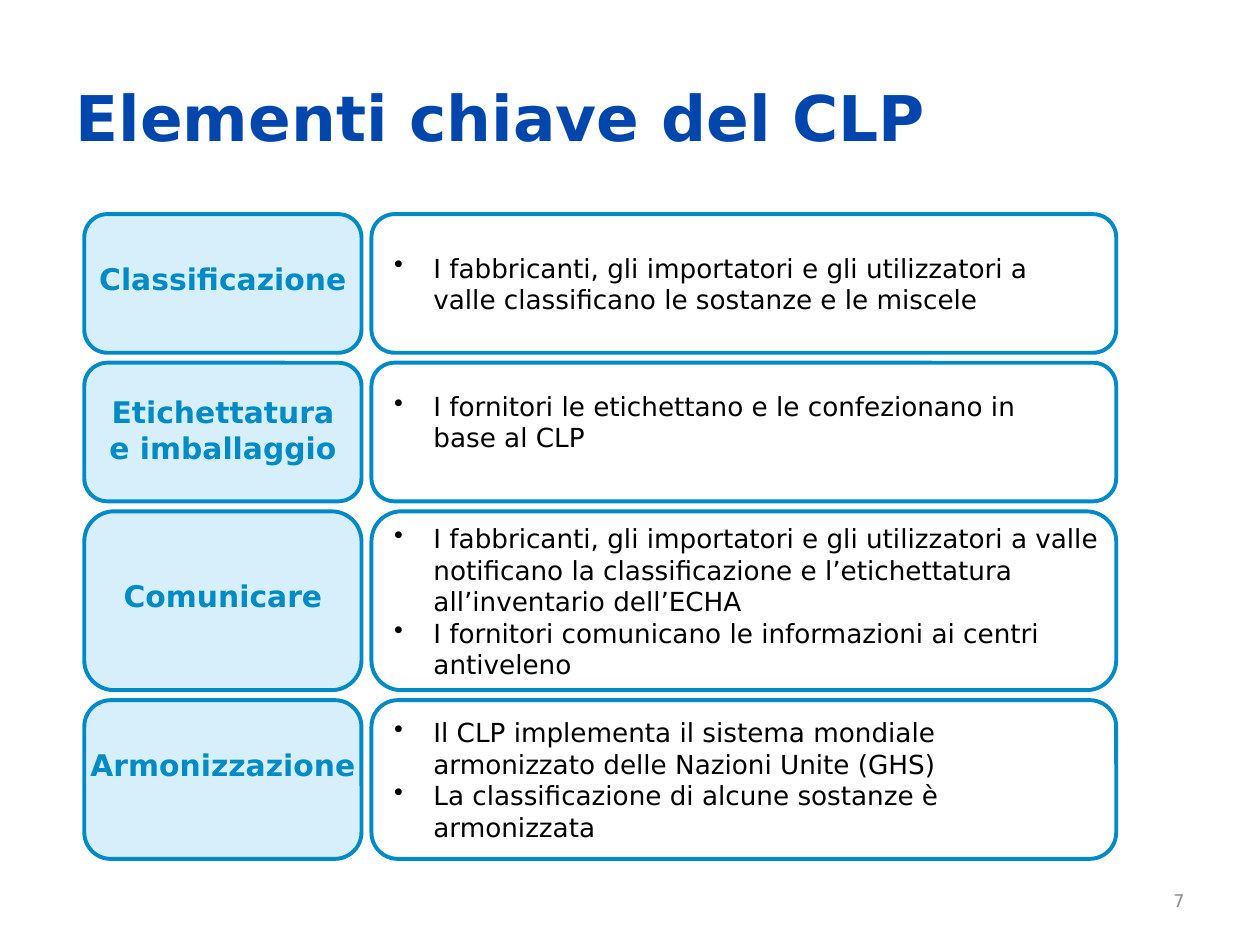
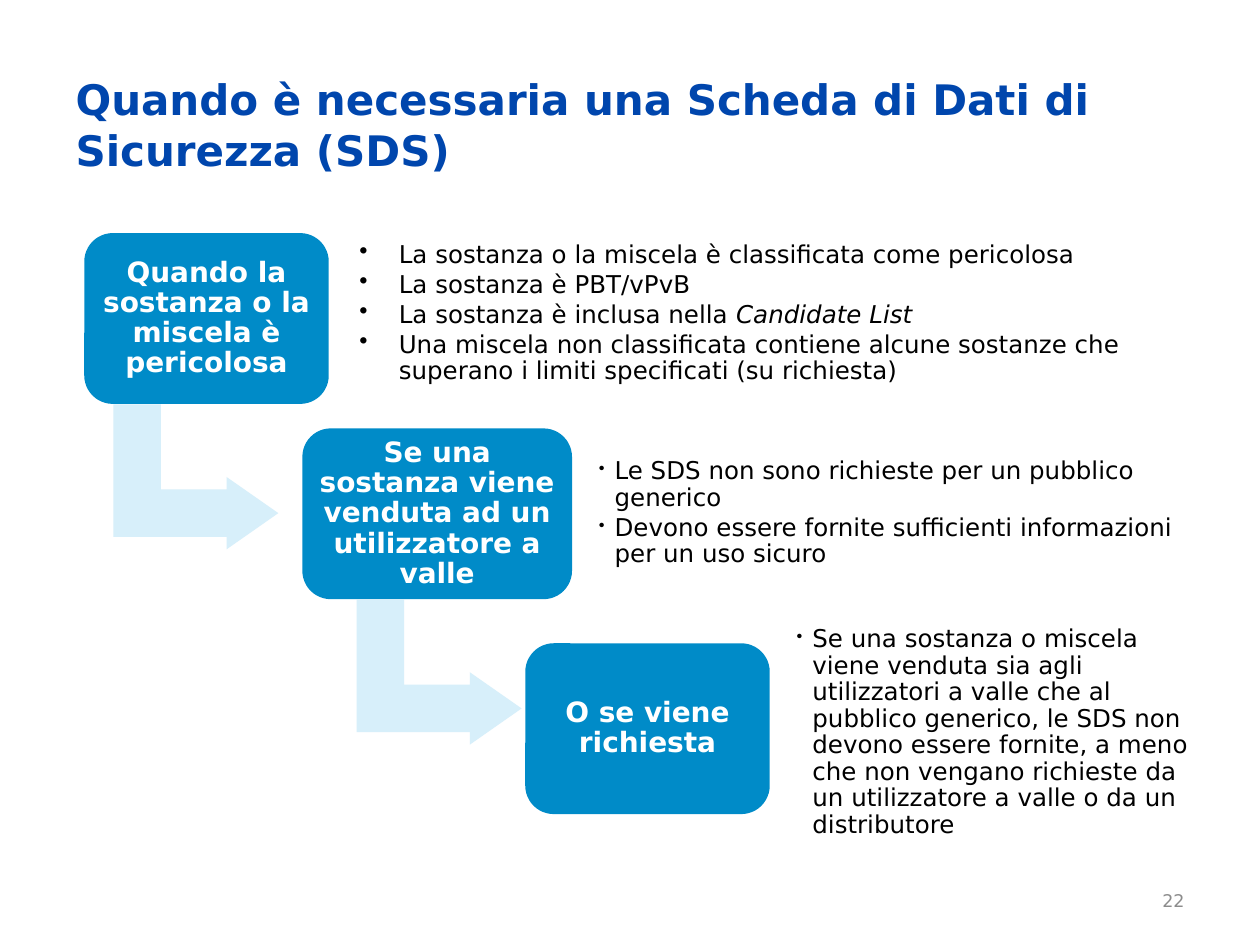
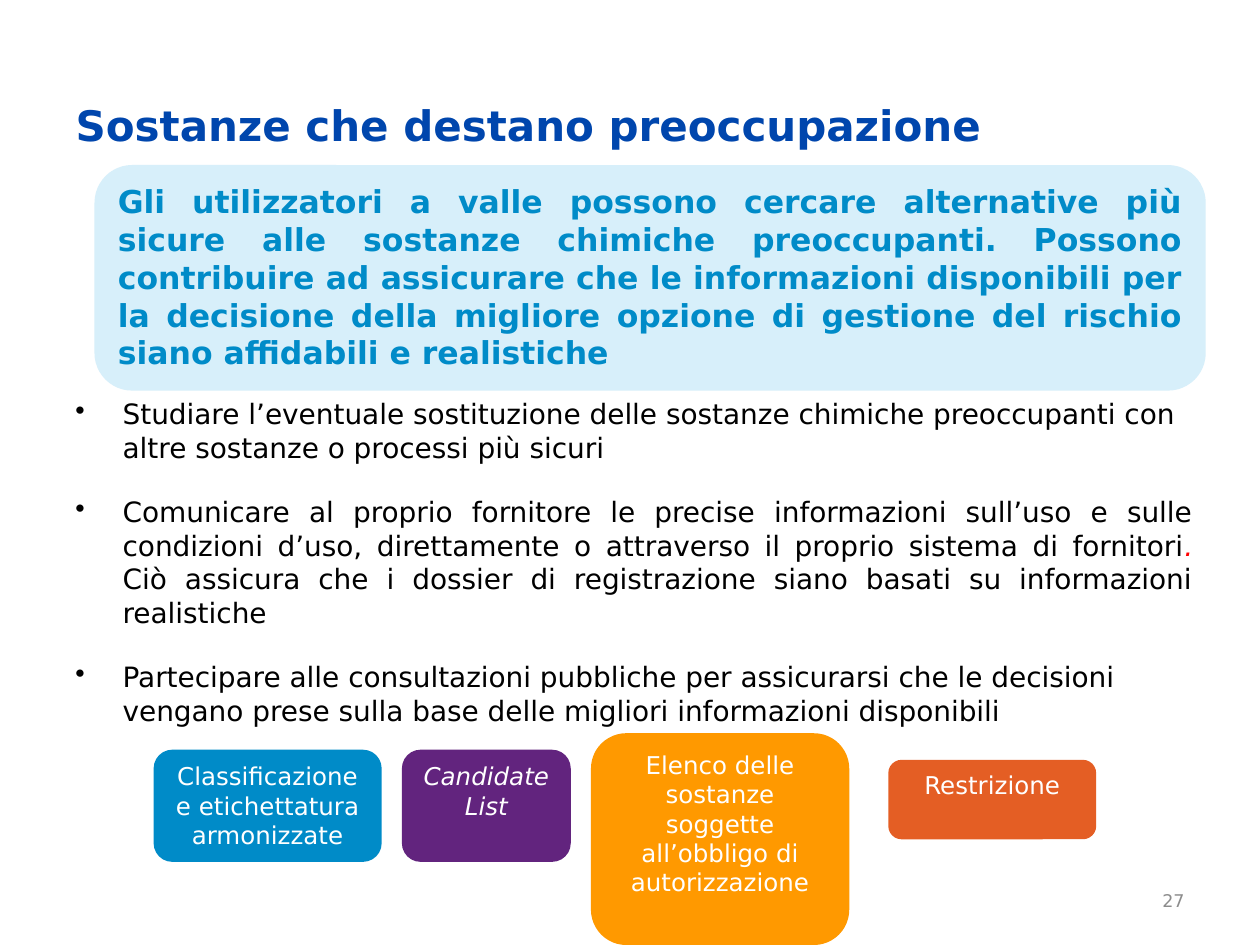
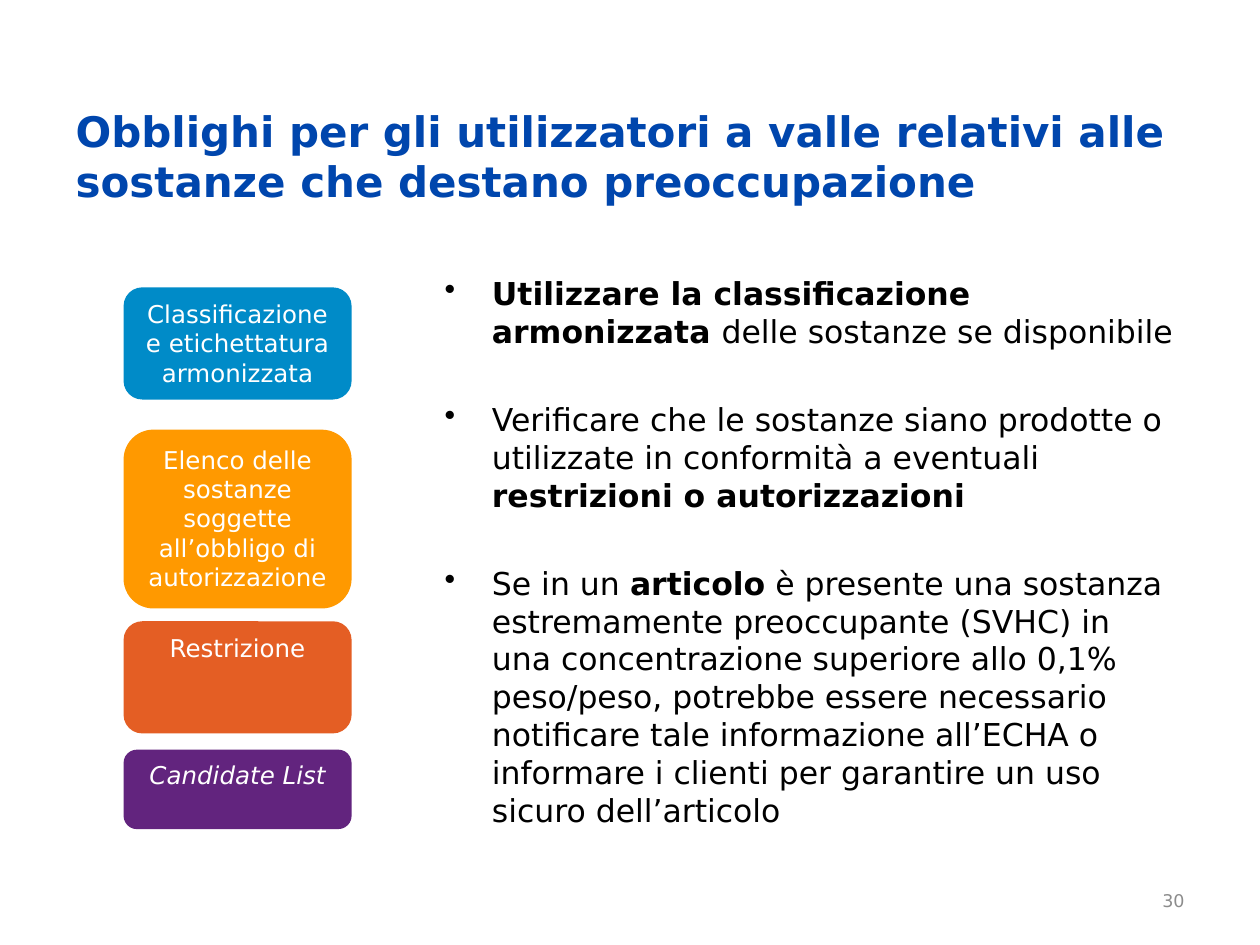
import pptx
import pptx.dml.color
import pptx.enum.shapes
import pptx.enum.text
import pptx.oxml.ns
import pptx.util
from lxml import etree

Pt = pptx.util.Pt
Align = pptx.enum.text.PP_ALIGN
Anchor = pptx.enum.text.MSO_ANCHOR
Shape = pptx.enum.shapes.MSO_SHAPE

FONT = "DejaVu Sans"
NAVY, BLUE, PALE = "0046AD", "008BC8", "D7EFFA"
PURPLE, AMBER, ORANGE = "62247E", "FF9900", "E45E24"
BLACK, WHITE, GREY, RED = "000000", "FFFFFF", "8C8C8C", "FF0000"
TITLE_BOX = (36, 26, 648, 90)
NUMBER_BOX = (516.2, 500.4, 167.8, 28.8)
AUTHORISATION = "Elenco delle sostanze soggette all’obbligo di autorizzazione"


def rgb(value):
    """Turn a hex string into a colour."""
    return pptx.dml.color.RGBColor.from_string(value)


def points(box):
    """Turn a box of numbers into lengths."""
    return [Pt(value) for value in box]


def style_font(font, size, color, bold=False, italic=False):
    """Apply the shared typeface with a size, colour and weight."""
    font.name = FONT
    font.size = Pt(size)
    font.color.rgb = rgb(color)
    font.bold = bold
    font.italic = italic


def add_bullet(paragraph, indent, percent):
    """Give a paragraph a hanging bullet; its font must be set already."""
    properties = paragraph._p.get_or_add_pPr()
    properties.set("marL", str(Pt(indent)))
    properties.set("indent", str(-Pt(indent)))
    font_element = properties.find(pptx.oxml.ns.qn("a:defRPr"))
    for tag, name, value in (("a:buSzPct", "val", str(percent * 1000)),
                             ("a:buChar", "char", "•")):
        bullet = etree.Element(pptx.oxml.ns.qn(tag))
        bullet.set(name, value)
        font_element.addprevious(bullet)


def prepare_frame(shape, anchor=Anchor.TOP, inset=None):
    """Make a text frame wrap at a fixed size and return it."""
    frame = shape.text_frame
    frame.word_wrap = True
    frame.auto_size = pptx.enum.text.MSO_AUTO_SIZE.NONE
    frame.vertical_anchor = anchor
    if inset is not None:
        frame.margin_left = frame.margin_right = Pt(inset)
        frame.margin_top = frame.margin_bottom = Pt(inset)
    return frame


def write(frame, text, size, color, align=Align.LEFT, bold=False, italic=False):
    """Write one paragraph into an empty frame and return it."""
    paragraph = frame.paragraphs[0]
    paragraph.text = text
    paragraph.alignment = align
    style_font(paragraph.font, size, color, bold, italic)
    return paragraph


def add_text(slide, box, text, size, color, align, anchor=Anchor.TOP, bold=False):
    """Add a text box with one paragraph."""
    shape = slide.shapes.add_textbox(*points(box))
    write(prepare_frame(shape, anchor), text, size, color, align, bold)


def add_bullets(slide, box, items, size, indent, anchor=Anchor.TOP, inset=None,
                percent=100, gap=0, line_spacing=None):
    """Add a bulleted list; an item is a string or a list of (text, style) runs."""
    frame = prepare_frame(slide.shapes.add_textbox(*points(box)), anchor, inset)
    for index, item in enumerate(items):
        paragraph = frame.add_paragraph() if index else frame.paragraphs[0]
        style_font(paragraph.font, size, BLACK)
        add_bullet(paragraph, indent, percent)
        paragraph.space_before = Pt(gap if index else 0)
        if line_spacing:
            paragraph.line_spacing = line_spacing
        for text, style in [(item, "")] if isinstance(item, str) else item:
            run = paragraph.add_run()
            run.text = text
            if "bold" in style:
                run.font.bold = True
            if "italic" in style:
                run.font.italic = True
            if "red" in style:
                run.font.color.rgb = rgb(RED)
    return frame


def add_panel(slide, box, fill=None, line=None, kind=Shape.ROUNDED_RECTANGLE):
    """Add a flat shape, rounded by default, with optional fill and outline."""
    shape = slide.shapes.add_shape(kind, *points(box))
    shape.shadow.inherit = False
    if fill:
        shape.fill.solid()
        shape.fill.fore_color.rgb = rgb(fill)
    else:
        shape.fill.background()
    if line:
        shape.line.color.rgb = rgb(line)
        shape.line.width = Pt(2.25)
    else:
        shape.line.fill.background()
    return shape


def add_chip(slide, box, text, fill, italic=False):
    """Add a coloured chip naming a regulatory list."""
    frame = prepare_frame(add_panel(slide, box, fill))
    write(frame, text, 14, WHITE, Align.CENTER, italic=italic)


def add_slide(presentation, title, number, size=24, box=TITLE_BOX):
    """Add a slide with its formatted title and page number."""
    slide = presentation.slides.add_slide(presentation.slide_layouts[5])
    shape = slide.shapes.title
    shape.left, shape.top, shape.width, shape.height = points(box)
    write(prepare_frame(shape, Anchor.MIDDLE), title, size, NAVY, bold=True)
    add_text(slide, NUMBER_BOX, str(number), 10, GREY, Align.RIGHT, Anchor.MIDDLE)
    return slide


def add_element_row(slide, box, label, label_top, label_inset, items, text_top, text_width):
    """Add a labelled row: a tinted name panel and an outlined list panel."""
    left, top, width, height = box
    label_width, gap, padding = 158.4, 5.7, 5.8
    list_left = left + label_width + gap
    add_panel(slide, (left, top, label_width, height), PALE, BLUE)
    add_panel(slide, (list_left, top, width - label_width - gap, height), line=BLUE)
    label_box = (left + label_inset, top + label_top, label_width - 2 * label_inset, 28)
    add_text(slide, label_box, label, 17, BLUE, Align.CENTER, bold=True)
    add_bullets(slide, (list_left + padding, top + text_top, text_width, height - text_top),
                items, 15, 22.5)


def add_step(slide, box, text, arrow_offset=None):
    """Add a step of the staircase with its arrow to the next step."""
    left, top, width, height = box
    if arrow_offset is not None:
        arrow_box = (left + arrow_offset, top + 92.2, 82.8, 94.3)
        arrow = add_panel(slide, arrow_box, PALE, kind=Shape.BENT_UP_ARROW)
        arrow.rotation = 90
        for index, value in enumerate((0.328, 0.25, 0.358)):
            arrow.adjustments[index] = value
    frame = prepare_frame(add_panel(slide, box, BLUE), Anchor.MIDDLE, 4.6)
    write(frame, text, 16, WHITE, Align.CENTER, bold=True).line_spacing = 0.9


def build_key_elements(presentation):
    """Build the slide on the key elements of CLP."""
    slide = add_slide(presentation, "Elementi chiave del CLP", 7, 36, (36, 21.6, 648, 90))
    rows = [
        (79.2, "Classificazione", 23, 0,
         ["I fabbricanti, gli importatori e gli utilizzatori a valle "
          "classificano le sostanze e le miscele"], 18, 408.2),
        (79.2, "Etichettatura e imballaggio", 14.4, 5.8,
         ["I fornitori le etichettano e le confezionano in base al CLP"], 12.2, 408.2),
        (102.2, "Comunicare", 34.6, 5.8,
         ["I fabbricanti, gli importatori e gli utilizzatori a valle notificano la "
          "classificazione e l’etichettatura all’inventario dell’ECHA",
          "I fornitori comunicano le informazioni ai centri antiveleno"], 2.9, 447.8),
        (90.7, "Armonizzazione", 23, -5.8,
         ["Il CLP implementa il sistema mondiale armonizzato delle Nazioni Unite (GHS)",
          "La classificazione di alcune sostanze è armonizzata"], 5.8, 408.2),
    ]
    top = 122.4
    for height, *content in rows:
        add_element_row(slide, (48.2, top, 589.7, height), *content)
        top += height + 5.7


def build_safety_sheet(presentation):
    """Build the staircase on when a safety data sheet is needed."""
    slide = add_slide(presentation,
                      "Quando è necessaria una Scheda di Dati di Sicurezza (SDS)", 22)
    steps = [
        ((48.2, 133.2, 139.7, 97.6), "Quando la sostanza o la miscela è pericolosa", 22.3,
         (200.9, 133.9, 453.6, 90.7), 22.5, 100,
         ["La sostanza o la miscela è classificata come pericolosa",
          "La sostanza è PBT/vPvB",
          [("La sostanza è inclusa nella ", ""), ("Candidate List", "italic")],
          "Una miscela non classificata contiene alcune sostanze che superano "
          "i limiti specificati (su richiesta)"]),
        ((172.8, 244.8, 154.1, 97.6),
         "Se una sostanza viene venduta ad un utilizzatore a valle", 36.7,
         (337.7, 254.2, 357.1, 78.5), 9, 70,
         ["Le SDS non sono richieste per un pubblico generico",
          "Devono essere fornite sufficienti informazioni per un uso sicuro"]),
        ((300.2, 367.6, 139.7, 97.6), "O se viene richiesta", None,
         (450.7, 355, 244.1, 127.4), 9, 70,
         ["Se una sostanza o miscela viene venduta sia agli utilizzatori a valle che al "
          "pubblico generico, le SDS non devono essere fornite, a meno che non vengano "
          "richieste da un utilizzatore a valle o da un distributore"]),
    ]
    for box, text, arrow_offset, list_box, indent, percent, items in steps:
        add_step(slide, box, text, arrow_offset)
        add_bullets(slide, list_box, items, 14, indent, Anchor.MIDDLE, 4.5, percent, 2, 0.9)


def build_substances_of_concern(presentation):
    """Build the slide on substances of concern."""
    slide = add_slide(presentation, "Sostanze che destano preoccupazione", 27)
    callout = add_panel(slide, (54, 94.3, 635, 128.9), PALE)
    write(prepare_frame(callout),
          "Gli utilizzatori a valle possono cercare alternative più sicure alle sostanze "
          "chimiche preoccupanti. Possono contribuire ad assicurare che le informazioni "
          "disponibili per la decisione della migliore opzione di gestione del rischio "
          "siano affidabili e realistiche", 18, BLUE, Align.JUSTIFY, bold=True)
    chips = [
        ((87.8, 428.4, 130.3, 64.1), "Classificazione e etichettatura armonizzate", BLUE),
        ((229.7, 428.4, 96.5, 64.1), "Candidate List", PURPLE, True),
        ((337.7, 419, 147.6, 121), AUTHORISATION, AMBER),
        ((507.6, 434.2, 118.8, 45.4), "Restrizione", ORANGE),
    ]
    for chip in chips:
        add_chip(slide, *chip)
    frame = add_bullets(slide, (36, 223.2, 653, 200.2), [
        "Studiare l’eventuale sostituzione delle sostanze chimiche preoccupanti con altre "
        "sostanze o processi più sicuri",
        [("Comunicare al proprio fornitore le precise informazioni sull’uso e sulle "
          "condizioni d’uso, direttamente o attraverso il proprio sistema di fornitori", ""),
         (". ", "red italic"),
         ("Ciò assicura che i dossier di registrazione siano basati su informazioni "
          "realistiche", "")],
        "Partecipare alle consultazioni pubbliche per assicurarsi che le decisioni vengano "
        "prese sulla base delle migliori informazioni disponibili",
    ], 16, 27, gap=17.6)
    frame.paragraphs[1].alignment = Align.JUSTIFY


def build_obligations(presentation):
    """Build the slide on the obligations of downstream users."""
    slide = add_slide(presentation,
                      "Obblighi per gli utilizzatori a valle relativi alle sostanze che "
                      "destano preoccupazione", 30, box=(36, 44, 648, 90))
    chips = [
        (164.2, 64.1, "Classificazione e etichettatura armonizzata", BLUE),
        (245.5, 102.2, AUTHORISATION, AMBER),
        (355, 64.1, "Restrizione", ORANGE),
        (428.4, 45.4, "Candidate List", PURPLE, True),
    ]
    for top, height, *content in chips:
        add_chip(slide, (70.6, top, 130.3, height), *content)
    frame = add_bullets(slide, (247, 129.6, 430.6, 355.7), [
        [("Utilizzare la classificazione armonizzata ", "bold"),
         ("delle sostanze se disponibile", "")],
        [("Verificare che le sostanze siano prodotte o utilizzate in conformità a "
          "eventuali ", ""), ("restrizioni o autorizzazioni", "bold")],
        [("Se in un ", ""), ("articolo", "bold"),
         (" è presente una sostanza estremamente preoccupante (SVHC) in una concentrazione "
          "superiore allo 0,1% peso/peso, potrebbe essere necessario notificare tale "
          "informazione all’ECHA o informare i clienti per garantire un uso sicuro "
          "dell’articolo", "")],
    ], 18, 27, gap=28.8)
    frame.margin_top = Pt(27)


def main():
    """Build and save the presentation."""
    presentation = pptx.Presentation()
    presentation.slide_width, presentation.slide_height = Pt(720), Pt(540)
    build_key_elements(presentation)
    build_safety_sheet(presentation)
    build_substances_of_concern(presentation)
    build_obligations(presentation)
    presentation.save("out.pptx")


if __name__ == "__main__":
    main()
